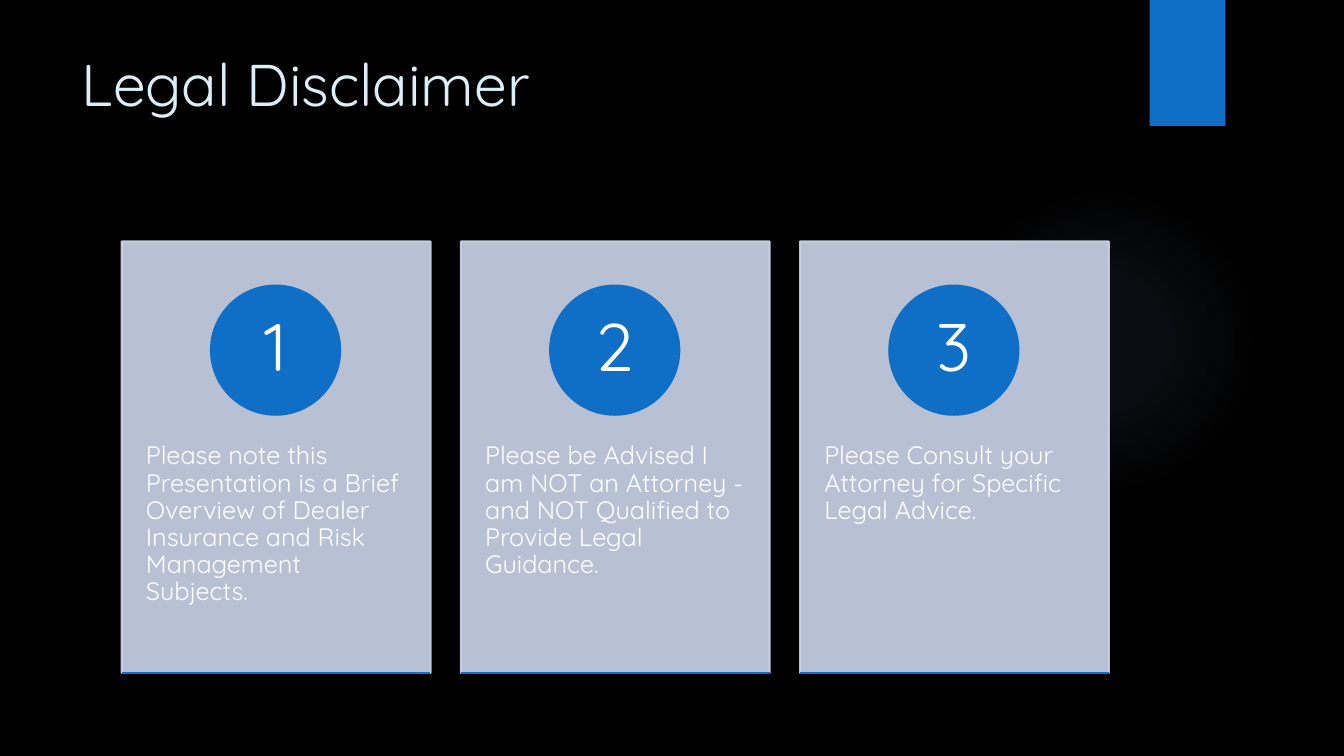
import pptx
import pptx.dml.color
import pptx.enum.shapes
import pptx.enum.text
import pptx.oxml
import pptx.oxml.ns
import pptx.util
from lxml import etree

RGBColor = pptx.dml.color.RGBColor
SHAPE = pptx.enum.shapes.MSO_SHAPE
ALIGN = pptx.enum.text.PP_ALIGN
ANCHOR = pptx.enum.text.MSO_ANCHOR
qn = pptx.oxml.ns.qn

BLACK = RGBColor(0x00, 0x00, 0x00)
WHITE = RGBColor(0xFF, 0xFF, 0xFF)
BLUE = RGBColor(0x0F, 0x6F, 0xC6)
PALE_BLUE = RGBColor(0xDB, 0xEF, 0xF9)
CARD_FILL = RGBColor(0xCC, 0xD5, 0xEA)
GLOW = RGBColor(0x82, 0xB1, 0xE5)
FONT = "Quicksand"
LINE_WIDTH = pptx.util.Pt(1.5)

NOTICES = [
    "Please note this Presentation is a Brief Overview of Dealer Insurance "
    "and Risk Management Subjects.",
    "Please be Advised I am NOT an Attorney - and NOT Qualified to Provide "
    "Legal Guidance.",
    "Please Consult your Attorney for Specific Legal Advice.",
]


def px(count):
    return pptx.util.Emu(count * 9525)


def place(box):
    return [px(length) for length in box]


def set_opacity(color_element, percent):
    alpha = etree.SubElement(color_element, qn("a:alpha"))
    alpha.set("val", str(percent * 1000))


def add_block(page, kind, box, color, outlined=True):
    block = page.shapes.add_shape(kind, *place(box))
    block.shadow.inherit = False
    block.fill.solid()
    block.fill.fore_color.rgb = color
    if outlined:
        block.line.color.rgb = color
        block.line.width = LINE_WIDTH
    else:
        block.line.fill.background()
    return block


def set_text(shape, text, size, color, align, anchor, insets):
    frame = shape.text_frame
    frame.word_wrap = True
    frame.auto_size = pptx.enum.text.MSO_AUTO_SIZE.NONE
    frame.vertical_anchor = anchor
    across, down = insets
    frame.margin_left = frame.margin_right = px(across)
    frame.margin_top = frame.margin_bottom = px(down)
    para = frame.paragraphs[0]
    para.text = text
    para.alignment = align
    para.line_spacing = 0.9
    para.font.name = FONT
    para.font.size = pptx.util.Pt(size)
    para.font.color.rgb = color


def add_glow(page, box):
    glow = add_block(page, SHAPE.OVAL, box, GLOW, outlined=False)
    stops = "".join(
        f'<a:gs pos="{position * 1000}"><a:srgbClr val="{GLOW}">'
        f'<a:alpha val="{opacity * 1000}"/></a:srgbClr></a:gs>'
        for position, opacity in [(0, 7), (36, 6), (69, 0), (100, 0)]
    )
    gradient = pptx.oxml.parse_xml(
        f'<a:gradFill {pptx.oxml.ns.nsdecls("a")}><a:gsLst>{stops}</a:gsLst>'
        '<a:path path="circle"><a:fillToRect l="50000" t="50000" '
        'r="50000" b="50000"/></a:path></a:gradFill>'
    )
    properties = glow.element.spPr
    properties.replace(properties.find(qn("a:solidFill")), gradient)


def add_title(page, box):
    title = page.shapes.title
    title.left, title.top, title.width, title.height = place(box)
    set_text(title, "Legal Disclaimer", 42, PALE_BLUE,
             ALIGN.LEFT, ANCHOR.TOP, (10, 5))


def add_card(page, box, number, notice):
    left, top, width, height = box

    # Translucent panel
    panel = add_block(page, SHAPE.RECTANGLE, box, CARD_FILL)
    for color_element in panel.element.spPr.iter(qn("a:srgbClr")):
        set_opacity(color_element, 90)

    # Notice text
    words = page.shapes.add_textbox(
        *place((left, top + 157, width, height - 164)))
    set_text(words, notice, 18, WHITE, ALIGN.LEFT, ANCHOR.TOP, (23, 35))

    # Number badge
    size = 123
    badge = add_block(page, SHAPE.OVAL,
                      (left + (width - size) // 2, top + 42, size, size), BLUE)
    set_text(badge, str(number), 48, WHITE,
             ALIGN.CENTER, ANCHOR.MIDDLE, (10, 1))

    # Bottom rule
    bottom = top + height
    rule = page.shapes.add_connector(
        pptx.enum.shapes.MSO_CONNECTOR.STRAIGHT,
        *place((left, bottom, left + width, bottom)))
    rule.line.color.rgb = BLUE
    rule.line.width = LINE_WIDTH
    etree.SubElement(rule.element.spPr, qn("a:effectLst"))


def add_cards(page, box):
    left, top, width, height = box
    gap = 29
    card_width = (width - gap * (len(NOTICES) - 1)) // len(NOTICES)
    for index, notice in enumerate(NOTICES):
        card_left = left + index * (card_width + gap)
        add_card(page, (card_left, top, card_width, height), index + 1, notice)


def main():
    deck = pptx.Presentation()
    deck.slide_width, deck.slide_height = px(1280), px(720)
    page = deck.slides.add_slide(deck.slide_layouts.get_by_name("Title Only"))
    page.background.fill.solid()
    page.background.fill.fore_color.rgb = BLACK

    # Backdrop
    add_glow(page, (903, 176, 296, 296))
    add_block(page, SHAPE.RECTANGLE, (1095, 0, 72, 120), BLUE, outlined=False)

    # Content
    add_title(page, (68, 48, 988, 147))
    add_cards(page, (116, 230, 940, 411))
    deck.save("out.pptx")


if __name__ == "__main__":
    main()
